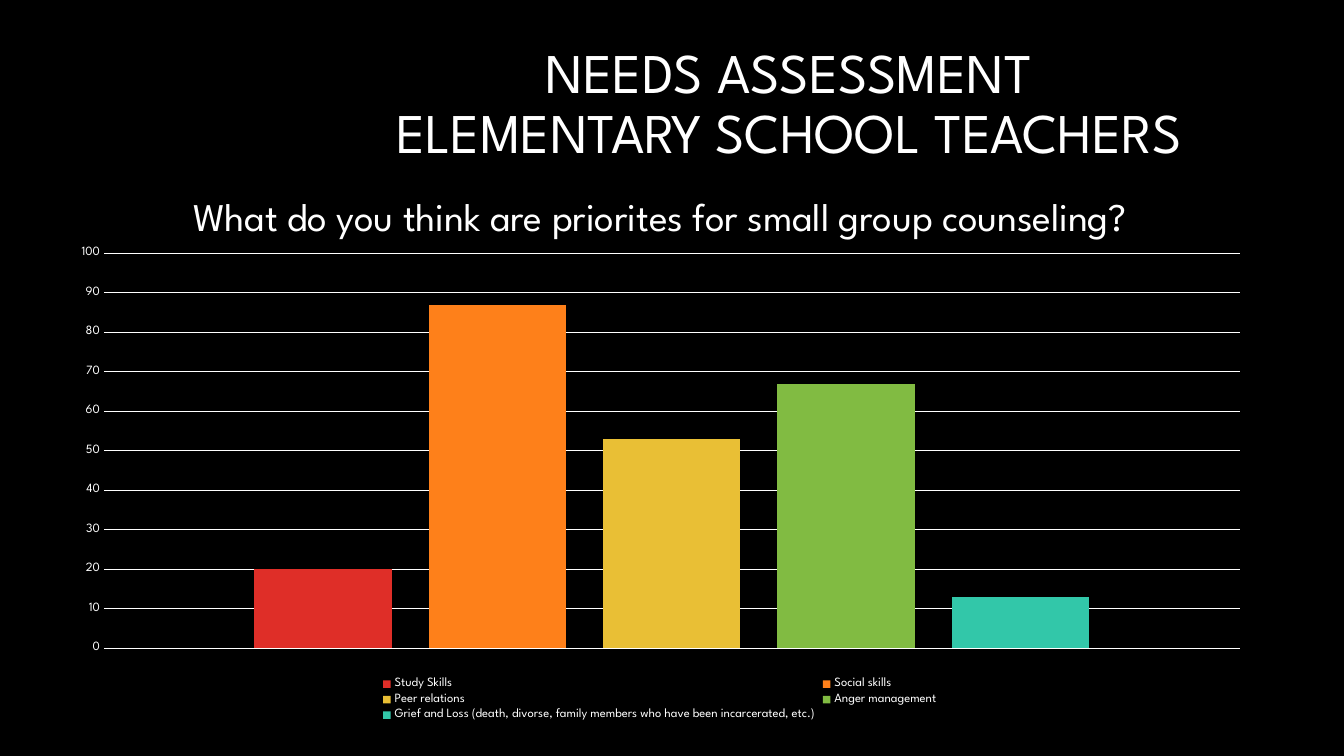
from lxml import etree
from pptx import Presentation
from pptx import util as u
from pptx.chart.data import CategoryChartData
from pptx.dml.color import RGBColor
from pptx.enum import chart as charts, text
from pptx.oxml.ns import qn

FONT = "League Spartan"
WHITE = "FFFFFF"


def color(hex_value):
    return RGBColor.from_string(hex_value)


def style(font, size):
    font.name = FONT
    font.size = u.Pt(size)
    font.bold = False
    font.color.rgb = color(WHITE)


deck = Presentation()
deck.slide_width = u.Cm(33.87)
deck.slide_height = u.Cm(19.05)
slide = deck.slides.add_slide(deck.slide_layouts[5])
slide.background.fill.solid()
slide.background.fill.fore_color.rgb = color("000000")

heading = slide.shapes.title
heading.left, heading.top = u.Cm(7.92), u.Cm(0.86)
heading.width, heading.height = u.Cm(23.93), u.Cm(3.58)
heading.text_frame.text = "NEEDS ASSESSMENT\vELEMENTARY SCHOOL TEACHERS"
heading.text_frame.vertical_anchor = text.MSO_ANCHOR.MIDDLE
heading.text_frame.auto_size = text.MSO_AUTO_SIZE.NONE
heading_line = heading.text_frame.paragraphs[0]
heading_line.alignment = text.PP_ALIGN.CENTER
heading_line.line_spacing = 0.9
for run in heading_line.runs:
    style(run.font, 40)

priorities = [
    ("Study Skills", 20, "DF2E28"),
    ("Social skills", 87, "FE801A"),
    ("Peer relations", 53, "E9BF35"),
    ("Anger management", 67, "81BB42"),
    ("Grief and Loss (death, divorse, family members who have been incarcerated, etc.)", 13, "32C7A9"),
]
answers = CategoryChartData()
answers.categories = ["1"]
for name, score, _ in priorities:
    answers.add_series(name, [score])

chart = slide.shapes.add_chart(
    charts.XL_CHART_TYPE.COLUMN_CLUSTERED,
    u.Cm(1.4), u.Cm(4.45), u.Cm(30.45), u.Cm(13.82), answers).chart
style(chart.font, 10)

chart.has_title = True
question = chart.chart_title.text_frame
question.text = "What do you think are priorites for small group counseling?"
style(question.paragraphs[0].runs[0].font, 28)
chart.chart_title.include_in_layout = False

chart.has_legend = True
chart.legend.position = charts.XL_LEGEND_POSITION.BOTTOM
chart.legend.include_in_layout = False
style(chart.legend.font, 9)

chart.category_axis.visible = False
scale = chart.value_axis
scale.minimum_scale, scale.maximum_scale, scale.major_unit = 0, 100, 10
scale.major_tick_mark = charts.XL_TICK_MARK.NONE
scale.minor_tick_mark = charts.XL_TICK_MARK.NONE
scale.format.line.fill.background()
scale.major_gridlines.format.line.color.rgb = color(WHITE)
scale.major_gridlines.format.line.width = u.Pt(0.75)
style(scale.tick_labels.font, 9)

bars = chart.plots[0]
bars.gap_width = 219
bars.overlap = -27
bars.vary_by_categories = False
for bar, (_, _, shade) in zip(bars.series, priorities):
    bar.format.fill.solid()
    bar.format.fill.fore_color.rgb = color(shade)

plot_area = chart.element.find(".//" + qn("c:plotArea"))
for automatic in plot_area.findall(qn("c:layout")):
    plot_area.remove(automatic)
layout = etree.Element(qn("c:layout"))
plot_area.insert(0, layout)
manual = etree.SubElement(layout, qn("c:manualLayout"))
for tag, value in [("layoutTarget", "inner"), ("xMode", "edge"), ("yMode", "edge"),
                   ("x", "0.04"), ("y", "0.14"), ("w", "0.94"), ("h", "0.72")]:
    etree.SubElement(manual, qn("c:" + tag)).set("val", value)

deck.save("out.pptx")
